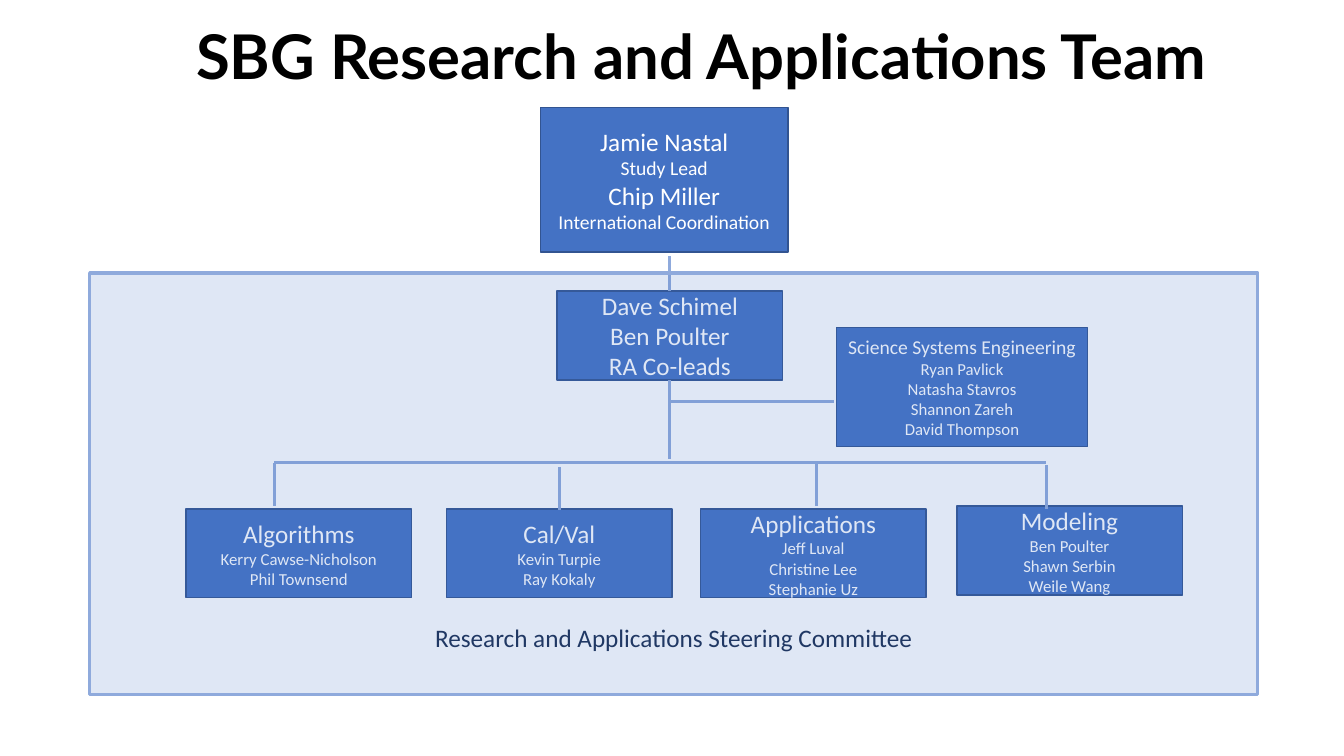
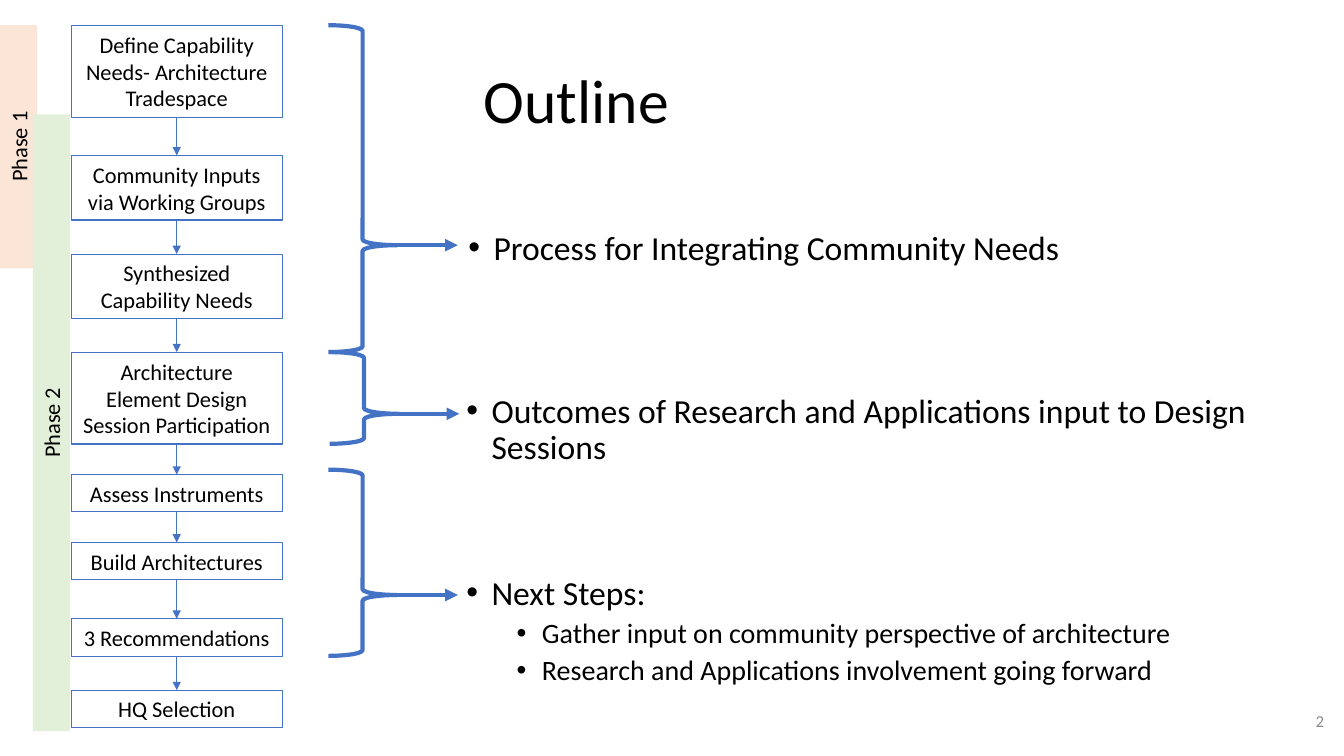
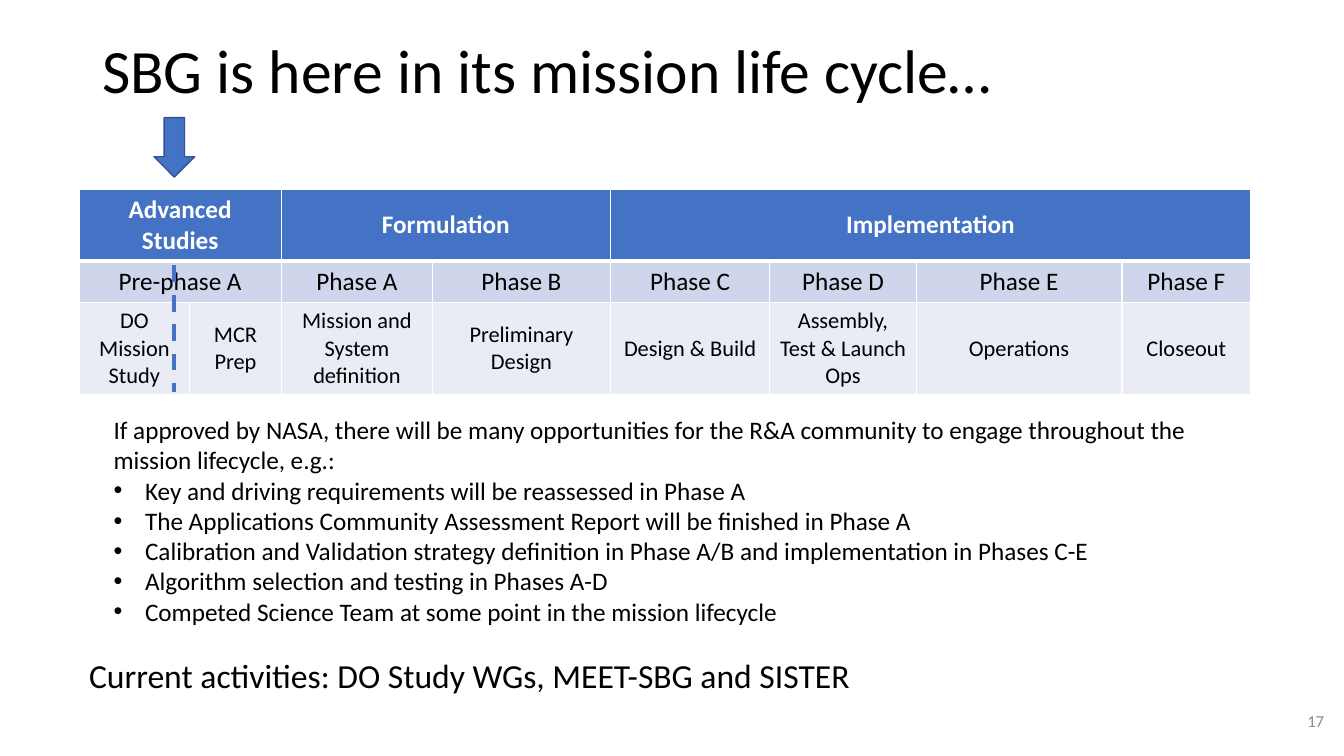
from dataclasses import dataclass

from lxml.etree import SubElement
from pptx import Presentation
from pptx.dml.color import RGBColor
from pptx.enum.dml import MSO_LINE
from pptx.enum.shapes import MSO_CONNECTOR, MSO_SHAPE
from pptx.enum.text import MSO_ANCHOR, PP_ALIGN
from pptx.oxml.ns import qn
from pptx.util import Pt


@dataclass(frozen=True)
class Theme:
    font: str = "Calibri"
    heading_font: str = "Lato"
    black: str = "000000"
    white: str = "FFFFFF"
    blue: str = "4472C4"
    outline: str = "325491"
    pale_line: str = "8FAADC"
    navy: str = "203864"
    grey: str = "8C8C8C"
    peach: str = "FBE5D6"
    green: str = "E2F0D9"
    band_dark: str = "CFD5EA"
    band_light: str = "E9EBF5"
    title: int = 44
    large: int = 24
    medium: int = 20
    body: int = 18
    label: int = 16
    role: int = 14
    small: int = 12


THEME = Theme()


@dataclass(frozen=True)
class Box:
    left: float
    top: float
    width: float
    height: float

    def inner(self, left, top, width, height):
        """Return a box placed relative to this one."""
        return Box(self.left + left, self.top + top, width, height)

    def point(self, x, y):
        return self.left + x, self.top + y

    def lengths(self):
        return Pt(self.left), Pt(self.top), Pt(self.width), Pt(self.height)


@dataclass(frozen=True)
class Line:
    """One paragraph; a hanging indent gives it a bullet."""
    text: str
    size: int = THEME.body
    margin: float = 0
    hanging: float = 0
    before: float = 0
    spacing: float = 1.0


def color(value):
    return RGBColor.from_string(value)


def write(frame, lines, ink=THEME.black, align=PP_ALIGN.LEFT, anchor=MSO_ANCHOR.TOP,
          bold=False, font=THEME.font):
    frame.word_wrap = True
    frame.vertical_anchor = anchor
    for index, line in enumerate(lines):
        paragraph = frame.paragraphs[0] if index == 0 else frame.add_paragraph()
        paragraph.text = line.text
        paragraph.alignment = align
        paragraph.line_spacing = line.spacing
        paragraph.space_before = Pt(line.before)
        if line.hanging:
            add_bullet(paragraph, line)
        paragraph.font.name = font
        paragraph.font.size = Pt(line.size)
        paragraph.font.bold = bold
        paragraph.font.color.rgb = color(ink)


def add_bullet(paragraph, line):
    properties = paragraph._p.get_or_add_pPr()
    properties.set("marL", str(Pt(line.margin)))
    properties.set("indent", str(-Pt(line.hanging)))
    SubElement(properties, qn("a:buFont"), typeface="Arial")
    SubElement(properties, qn("a:buChar"), char="•")


def add_text(slide, box, lines, **style):
    text_box = slide.shapes.add_textbox(*box.lengths())
    write(text_box.text_frame, lines, **style)


def add_block(slide, box, fill=None, line=None, weight=1, kind=MSO_SHAPE.RECTANGLE):
    shape = slide.shapes.add_shape(kind, *box.lengths())
    shape.shadow.inherit = False
    if fill:
        shape.fill.solid()
        shape.fill.fore_color.rgb = color(fill)
    else:
        shape.fill.background()
    if line:
        shape.line.color.rgb = color(line)
        shape.line.width = Pt(weight)
    else:
        shape.line.fill.background()
    return shape


def add_line(slide, start, end, ink, weight, arrow=False, dashed=False):
    ends = [Pt(length) for length in (*start, *end)]
    connector = slide.shapes.add_connector(MSO_CONNECTOR.STRAIGHT, *ends)
    connector.line.color.rgb = color(ink)
    connector.line.width = Pt(weight)
    if dashed:
        connector.line.dash_style = MSO_LINE.DASH
    properties = connector._element.spPr
    if arrow:
        SubElement(properties.find(qn("a:ln")), qn("a:tailEnd"), type="triangle")
    SubElement(properties, qn("a:effectLst"))


def add_title(slide, box, text, **style):
    add_text(slide, box, [Line(text, THEME.title, spacing=0.9)],
             anchor=MSO_ANCHOR.MIDDLE, **style)


def add_page_number(slide, number):
    add_text(slide, Box(737, 500, 216, 29), [Line(str(number), THEME.small)],
             ink=THEME.grey, align=PP_ALIGN.RIGHT, anchor=MSO_ANCHOR.MIDDLE)


def add_team_box(slide, box, lines):
    shape = add_block(slide, box, THEME.blue, THEME.outline)
    write(shape.text_frame, lines, THEME.white, PP_ALIGN.CENTER, MSO_ANCHOR.MIDDLE)


def add_committee_panel(slide, box):
    """Lay the translucent committee panel over the chart."""
    panel = add_block(slide, box, THEME.blue, THEME.pale_line, 2.25)
    fill = panel._element.spPr.find(qn("a:solidFill"))
    SubElement(fill.find(qn("a:srgbClr")), qn("a:alpha"), val="17000")
    panel.text_frame.margin_bottom = Pt(30)
    write(panel.text_frame, [Line("Research and Applications Steering Committee")],
          THEME.navy, PP_ALIGN.CENTER, MSO_ANCHOR.BOTTOM)


def add_organization_chart(slide, box):
    def people(heading, names, size=THEME.body):
        return [Line(heading, size)] + [Line(name, THEME.small) for name in names]

    team_width, team_height = 161, 63.5
    bus_y, stem_x, drop = 253.5, 414.5, 31
    # heading, members, box left, box top, drop x, drop top
    teams = [
        ("Algorithms", ["Kerry Cawse-Nicholson", "Phil Townsend"], 69, 286.5, 132, bus_y),
        ("Cal/Val", ["Kevin Turpie", "Ray Kokaly"], 255, 286.5, 335.5, 256.5),
        ("Applications", ["Jeff Luval", "Christine Lee", "Stephanie Uz"],
         436.5, 286.5, 519, bus_y),
        ("Modeling", ["Ben Poulter", "Shawn Serbin", "Weile Wang"],
         619.5, 284.5, 683.5, 255.5),
    ]
    add_team_box(slide, box.inner(533.5, 157, 179.5, 85), people(
        "Science Systems Engineering",
        ["Ryan Pavlick", "Natasha Stavros", "Shannon Zareh", "David Thompson"],
        THEME.role))
    add_team_box(slide, box.inner(322, 0, 177, 103), [
        Line("Jamie Nastal"), Line("Study Lead", THEME.role),
        Line("Chip Miller"), Line("International Coordination", THEME.role)])
    add_team_box(slide, box.inner(334, 131, team_width, team_height),
                 [Line("Dave Schimel"), Line("Ben Poulter"), Line("RA Co-leads")])
    for heading, names, left, top, _, _ in teams:
        add_team_box(slide, box.inner(left, top, team_width, team_height),
                     people(heading, names))

    links = [((x, top), (x, top + drop)) for *_, x, top in teams]
    links += [
        ((teams[0][4], bus_y), (teams[-1][4], bus_y)),
        ((stem_x, 106), (stem_x, 131)),
        ((stem_x, 194.5), (stem_x, 251)),
        ((531.5, 209.5), (stem_x, 209.5)),
    ]
    for start, end in links:
        add_line(slide, box.point(*start), box.point(*end), THEME.pale_line, 2.25)
    add_committee_panel(slide, box.inner(0, 118, box.width, box.height - 118))


def add_phase_band(slide, box, text, fill):
    """Fill an upright box with a band whose text reads upwards."""
    turned = box.inner((box.width - box.height) / 2, (box.height - box.width) / 2,
                       box.height, box.width)
    band = add_block(slide, turned, fill)
    band.rotation = 270
    write(band.text_frame, [Line(text, THEME.label)], align=PP_ALIGN.CENTER)


def add_process_flow(slide, box):
    # text, number of lines, top
    steps = [
        ("Define Capability Needs- Architecture Tradespace", 3, 0),
        ("Community Inputs via Working Groups", 2, 93),
        ("Synthesized Capability Needs", 2, 163.5),
        ("Architecture Element Design Session Participation", 3, 233.5),
        ("Assess Instruments", 1, 321),
        ("Build Architectures", 1, 369.5),
        ("3 Recommendations", 1, 424),
        ("HQ Selection", 1, 475),
    ]
    center = box.width / 2
    previous_bottom = None
    for text, line_count, top in steps:
        height = 7.2 + 19.5 * line_count
        step = add_block(slide, box.inner(0, top, box.width, height),
                         line=THEME.blue, weight=0.75)
        write(step.text_frame, [Line(text, THEME.label)], align=PP_ALIGN.CENTER,
              anchor=MSO_ANCHOR.MIDDLE)
        if previous_bottom is not None:
            add_line(slide, box.point(center, previous_bottom), box.point(center, top),
                     THEME.blue, 0.5, arrow=True)
        previous_bottom = top + height


def add_outline_topic(slide, box, text_left, text_top, lines):
    """Draw a brace in the box, with an arrow from its tip to the topic."""
    tip = 0.673
    brace = add_block(slide, box, line=THEME.blue, weight=3, kind=MSO_SHAPE.RIGHT_BRACE)
    brace.adjustments[0] = 0.083
    brace.adjustments[1] = tip
    tip_y = box.height * tip
    add_line(slide, box.point(box.width, tip_y), box.point(box.width + 43.5, tip_y),
             THEME.blue, 3, arrow=True)
    add_text(slide, box.inner(text_left, text_top, 583, 60), lines)


def topic(text):
    return Line(text, THEME.large, 18, 18, 10, 0.9)


def subtopic(text):
    return Line(text, THEME.medium, 54, 18, 5, 0.9)


def add_life_cycle_table(slide, box):
    widths = [79, 65.5, 108, 127, 114, 104.5, 147, 92]
    heights = [51.2, 29.5, 66]
    # row texts by first column, fill, ink, size
    rows = [
        ({0: "Advanced Studies", 2: "Formulation", 4: "Implementation"},
         THEME.blue, THEME.white, THEME.body),
        ({0: "Pre-phase A", 2: "Phase A", 3: "Phase B", 4: "Phase C", 5: "Phase D",
          6: "Phase E", 7: "Phase F"},
         THEME.band_dark, THEME.black, THEME.body),
        (dict(enumerate(["DO Mission Study", "MCR Prep", "Mission and System definition",
                         "Preliminary Design", "Design & Build",
                         "Assembly, Test & Launch Ops", "Operations", "Closeout"])),
         THEME.band_light, THEME.black, THEME.label),
    ]
    table = slide.shapes.add_table(len(rows), len(widths), *box.lengths()).table
    for column, width in zip(table.columns, widths):
        column.width = Pt(width)
    for row, height in zip(table.rows, heights):
        row.height = Pt(height)
    for row_index, (texts, fill, ink, size) in enumerate(rows):
        starts = sorted(texts)
        for start, following in zip(starts, starts[1:] + [len(widths)]):
            if following - start > 1:
                table.cell(row_index, start).merge(table.cell(row_index, following - 1))
            write(table.cell(row_index, start).text_frame, [Line(texts[start], size)],
                  ink, PP_ALIGN.CENTER, bold=row_index == 0)
        for column_index in range(len(widths)):
            cell = table.cell(row_index, column_index)
            cell.vertical_anchor = MSO_ANCHOR.MIDDLE
            add_cell_borders(cell, top=3 if row_index == 1 else 1,
                             bottom=3 if row_index == 0 else 1)
            cell.fill.solid()
            cell.fill.fore_color.rgb = color(fill)


def add_cell_borders(cell, top, bottom):
    properties = cell._tc.get_or_add_tcPr()
    for side, weight in (("L", 1), ("R", 1), ("T", top), ("B", bottom)):
        border = SubElement(properties, qn(f"a:ln{side}"), w=str(Pt(weight)))
        fill = SubElement(border, qn("a:solidFill"))
        SubElement(fill, qn("a:srgbClr"), val=THEME.white)


def add_current_marker(slide, box):
    """Point at the present stage and run a dashed line down through it."""
    add_block(slide, box.inner(0, 0, box.width, 42.5), THEME.blue, THEME.outline,
              kind=MSO_SHAPE.DOWN_ARROW)
    center = box.width / 2
    add_line(slide, box.point(center, 105.5), box.point(center, box.height),
             THEME.blue, 3, dashed=True)


def build_team_slide(slide):
    add_title(slide, Box(133, -9.5, 828, 104.5), "SBG Research and Applications Team",
              bold=True, font=THEME.heading_font)
    add_organization_chart(slide, Box(64, 77, 834.5, 419))


def build_outline_slide(slide):
    add_title(slide, Box(338.5, 22, 561.5, 104.5), "Outline")
    add_process_flow(slide, Box(51, 18, 150.5, 502))
    add_phase_band(slide, Box(0, 18, 26.6, 173.5), "Phase 1", THEME.peach)
    add_phase_band(slide, Box(23.5, 81.7, 26.6, 440.6), "Phase 2", THEME.green)
    add_outline_topic(slide, Box(234.5, 18, 49, 233.5), 93, 143.5,
                      [topic("Process for Integrating Community Needs")])
    add_outline_topic(slide, Box(235.5, 251.5, 49, 65.5), 90.5, 26.5,
                      [topic("Outcomes of Research and Applications input to Design Sessions")])
    add_outline_topic(slide, Box(234.5, 335.5, 49, 133), 91.5, 72.5, [
        topic("Next Steps:"),
        subtopic("Gather input on community perspective of architecture"),
        subtopic("Research and Applications involvement going forward")])
    add_page_number(slide, 2)


def build_life_cycle_slide(slide):
    add_title(slide, Box(66, 0, 828, 104.5), "SBG is here in its mission life cycle…")
    add_life_cycle_table(slide, Box(56.5, 135.2, 837, 146.7))
    add_current_marker(slide, Box(110, 84, 29, 196))
    opportunities = [
        "Key and driving requirements will be reassessed in Phase A",
        "The Applications Community Assessment Report will be finished in Phase A",
        "Calibration and Validation strategy definition in Phase A/B and "
        "implementation in Phases C-E",
        "Algorithm selection and testing in Phases A-D",
        "Competed Science Team at some point in the mission lifecycle",
    ]
    add_text(slide, Box(74, 292.5, 802, 160), [
        Line("If approved by NASA, there will be many opportunities for the R&A community "
             "to engage throughout the mission lifecycle, e.g.:"),
        *(Line(text, margin=22.5, hanging=22.5) for text in opportunities)])
    add_text(slide, Box(56.5, 464.5, 804, 36),
             [Line("Current activities: DO Study WGs, MEET-SBG and SISTER", THEME.large)])
    add_page_number(slide, 17)


def main():
    presentation = Presentation()
    presentation.slide_width, presentation.slide_height = Pt(960), Pt(540)
    for build in (build_team_slide, build_outline_slide, build_life_cycle_slide):
        build(presentation.slides.add_slide(presentation.slide_layouts[6]))
    presentation.save("out.pptx")


if __name__ == "__main__":
    main()
